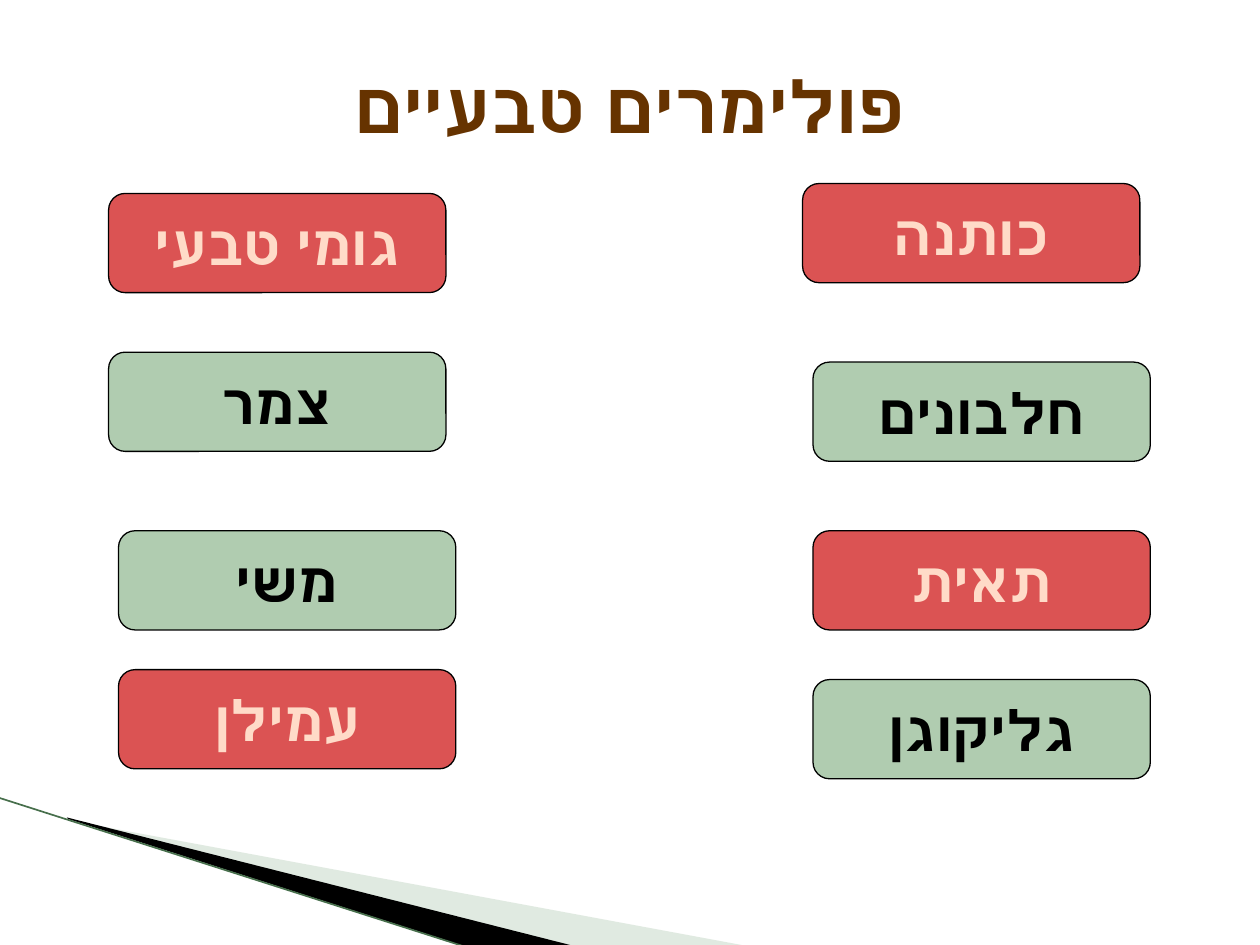
from lxml.etree import SubElement
from pptx import Presentation
from pptx.dml.color import RGBColor
from pptx.enum.shapes import MSO_CONNECTOR as Link, MSO_SHAPE as Shape
from pptx.enum.text import MSO_ANCHOR as Anchor, PP_ALIGN as Align
from pptx.oxml.ns import qn
from pptx.util import Cm, Pt

FONT = "Courier New"
HUES = {
    "title": "663300", "red": "DB5353", "cream": "FFDBC8",
    "green": "B0CCB0", "black": "000000", "pale": "B3CBB5", "edge": "476F4C",
}
INK = {"red": "cream", "green": "black"}
CARD_W, CARD_H = 6.8, 2


def hue(name):
    return RGBColor.from_string(HUES[name])


def write(frame, text, size, ink):
    """Centred, bold right-to-left text."""
    frame.text = text
    frame.vertical_anchor = Anchor.MIDDLE
    para = frame.paragraphs[0]
    para.alignment = Align.CENTER
    para._p.get_or_add_pPr().set("rtl", "1")
    font = para.runs[0].font
    font.name, font.size, font.bold = FONT, Pt(size), True
    font.color.rgb = hue(ink)


def add_title(slide, text, left, top, width, height):
    title = slide.shapes.title
    title.left, title.top = Cm(left), Cm(top)
    title.width, title.height = Cm(width), Cm(height)
    write(title.text_frame, text, 41, "title")


def add_wedge(slide, left, top, points, fill, alpha=None):
    spots = [(Cm(left + x), Cm(top + y)) for x, y in points]
    pen = slide.shapes.build_freeform(*spots[0])
    pen.add_line_segments(spots[1:], close=True)
    wedge = pen.convert_to_shape()
    wedge.shadow.inherit = False
    wedge.fill.solid()
    wedge.fill.fore_color.rgb = hue(fill)
    wedge.line.fill.background()
    if alpha:
        tint = wedge.fill._xPr.find(".//" + qn("a:srgbClr"))
        SubElement(tint, qn("a:alpha"), val=str(alpha * 1000))


def add_sweep(slide, left, top):
    """Corner decoration: two wedges and a thin edge."""
    add_wedge(slide, left, top,
              [(1.4, 0.46), (15.11, 3), (11.58, 3), (1.4, 0.43)], "pale", 40)
    add_wedge(slide, left, top,
              [(1.35, 0.4), (11.61, 3), (9.45, 3.02), (1.37, 0.43)], "black")
    edge = slide.shapes.add_connector(
        Link.STRAIGHT, Cm(left - 0.03), Cm(top), Cm(left + 9.42), Cm(top + 3.02))
    edge.line.color.rgb = hue("edge")
    edge.line.width = Pt(0.95)
    SubElement(edge._element.spPr, qn("a:effectLst"))


def add_column(slide, left, top, cards):
    """Cards of one column, each with its offset from the column's corner."""
    for text, fill, x, y in cards:
        card = slide.shapes.add_shape(
            Shape.ROUNDED_RECTANGLE, Cm(left + x), Cm(top + y), Cm(CARD_W), Cm(CARD_H))
        card.shadow.inherit = False
        card.fill.solid()
        card.fill.fore_color.rgb = hue(fill)
        card.line.color.rgb = hue("black")
        card.line.width = Pt(0.75)
        card.text_frame.word_wrap = False
        write(card.text_frame, text, 32, INK[fill])


def main():
    deck = Presentation()
    deck.slide_width, deck.slide_height = Cm(25.4), Cm(19.05)
    slide = deck.slides.add_slide(deck.slide_layouts[5])

    add_sweep(slide, 0, 16.08)
    add_title(slide, "פולימרים טבעיים", 1.27, 0.53, 22.86, 3.18)

    # Right column, then left
    add_column(slide, 16.18, 3.7, [
        ("כותנה", "red", 0, 0),
        ("חלבונים", "green", 0.21, 3.6),
        ("תאית", "red", 0.21, 7),
        ("גליקוגן", "green", 0.21, 10),
    ])
    add_column(slide, 2.19, 3.7, [
        ("גומי טבעי", "red", 0, 0.2),
        ("צמר", "green", 0, 3.4),
        ("משי", "green", 0.2, 7),
        ("עמילן", "red", 0.2, 9.8),
    ])
    deck.save("out.pptx")


if __name__ == "__main__":
    main()
